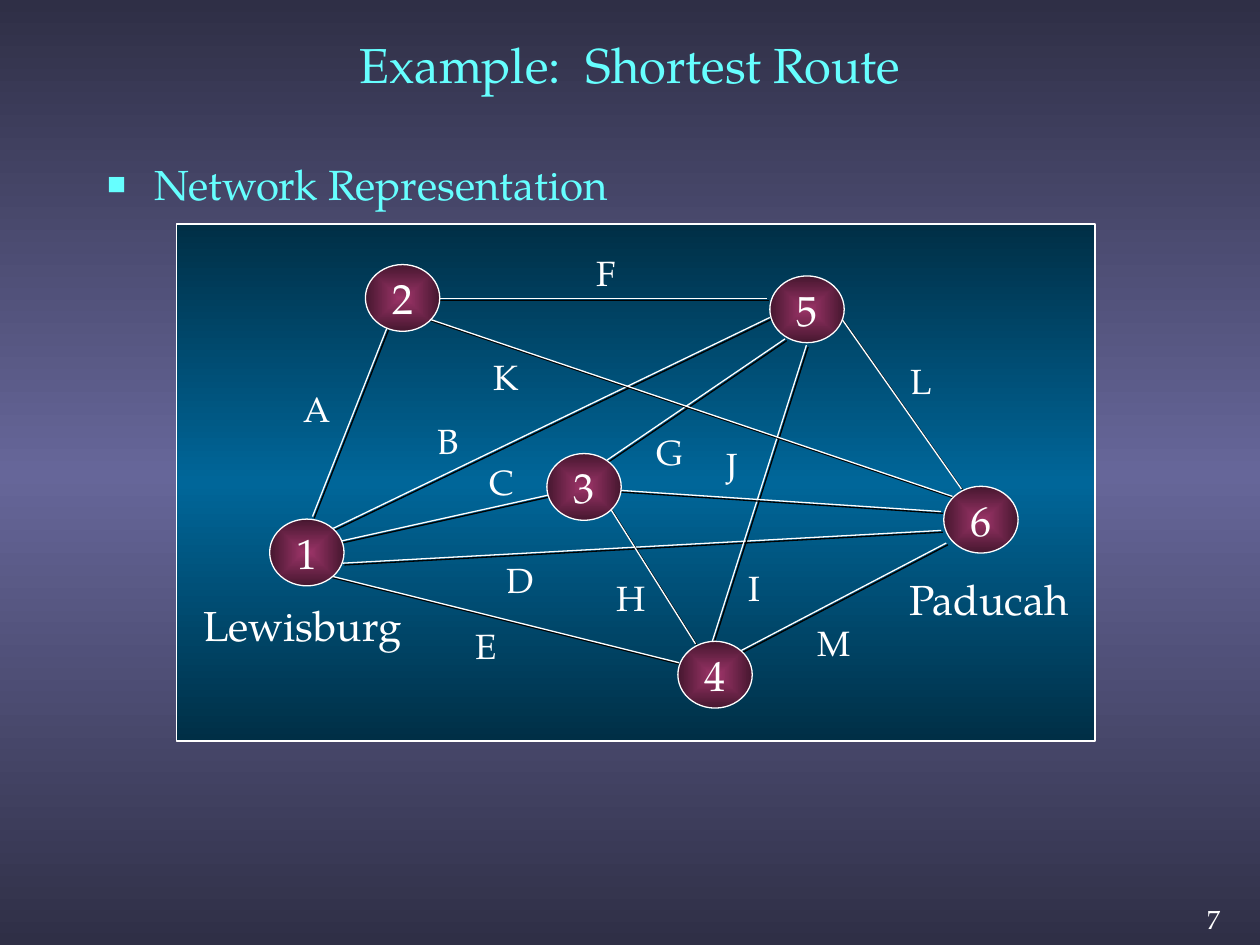
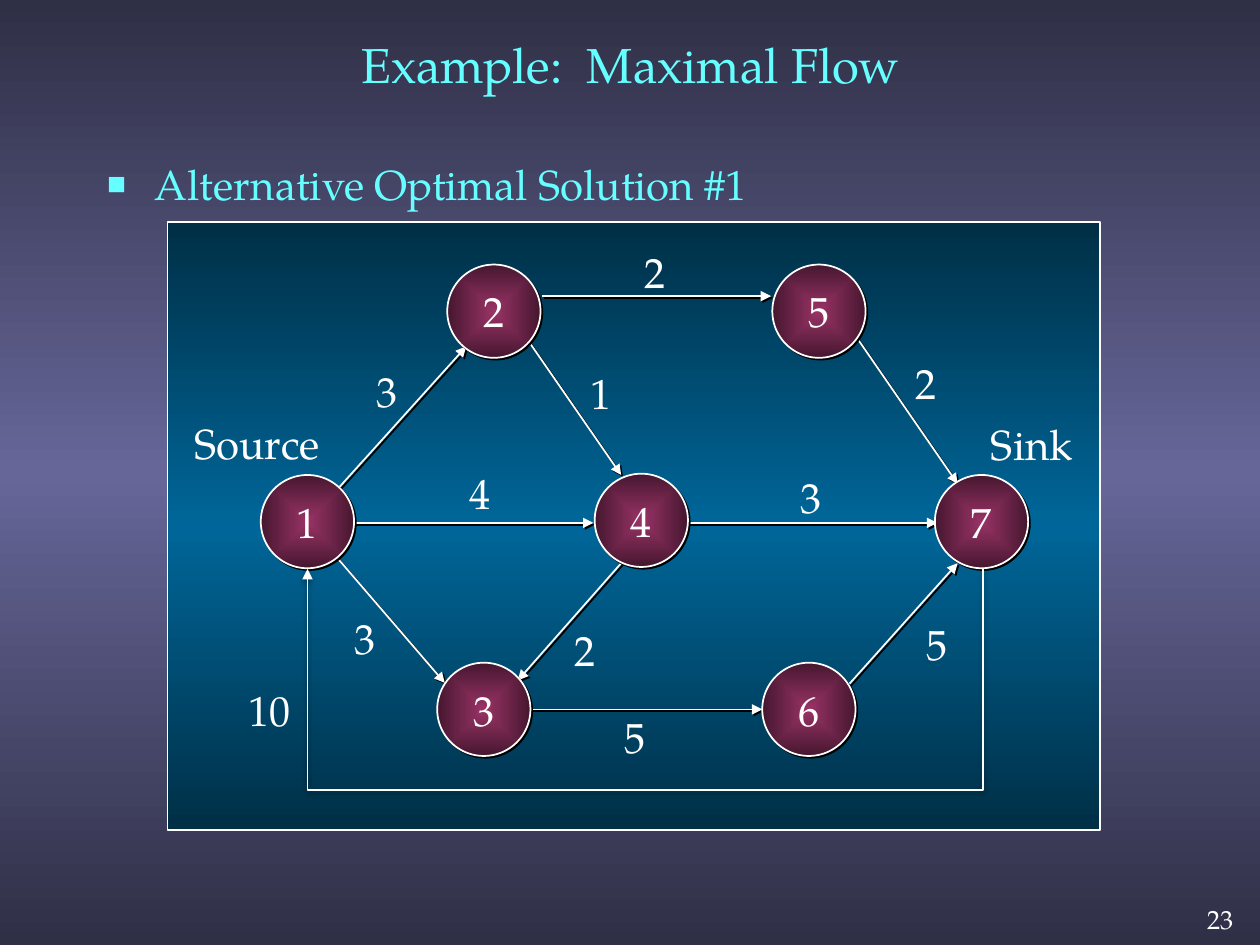
from lxml import etree
from pptx import Presentation
from pptx.dml.color import RGBColor
from pptx.enum.shapes import MSO_CONNECTOR as LINK, MSO_SHAPE as SHAPE
from pptx.enum.text import MSO_ANCHOR as ANCHOR, PP_ALIGN as ALIGN
from pptx.oxml import parse_xml
from pptx.oxml.ns import nsdecls, qn
from pptx.util import Inches, Pt

FONT = "TeX Gyre Pagella"
HEX = {
    "white": "FFFFFF", "black": "000000", "aqua": "66FFFF",
    "slate": "666699", "night": "2F2F46",
    "blue": "006699", "navy": "002F46",
    "plum": "993366", "wine": "46172F",
}
TITLE_BOX = (0.75, 0.06, 8.5, 0.89)
HEAD_BOX = (0.75, 1.21, 5.78, 0.62)
PAGE_BOX = (9.58, 7.08, 0.37, 0.43)

# Nodes: number -> left, top.  Edges: label, label centre, from, to.
ROUTE = {
    "title": "Example:  Shortest Route",
    "head": "Network Representation",
    "page": "7",
    "panel": (1.4, 1.78, 7.29, 4.1),
    "size": (0.59, 0.53),
    "line": 0.75,
    "label": 20,
    "directed": False,
    "nodes": {
        "1": (2.14, 4.12), "2": (2.9, 2.1), "3": (4.34, 3.6),
        "4": (5.38, 5.09), "5": (6.11, 2.19), "6": (7.49, 3.86),
    },
    "edges": [
        ("A", (2.52, 3.24), (2.48, 4.1), (3.08, 2.58)),
        ("B", (3.56, 3.5), (2.61, 4.21), (6.11, 2.52)),
        ("C", (3.98, 3.82), (2.68, 4.3), (4.35, 3.93)),
        ("D", (4.13, 4.6), (2.72, 4.47), (7.47, 4.21)),
        ("E", (3.86, 5.12), (2.58, 4.56), (5.39, 5.26)),
        ("F", (4.81, 2.16), (3.43, 2.37), (6.09, 2.37)),
        ("G", (5.32, 3.58), (4.82, 3.65), (6.23, 2.69)),
        ("H", (5.01, 4.74), (4.84, 4.03), (5.52, 5.11)),
        ("I", (5.99, 4.66), (5.65, 5.1), (6.4, 2.74)),
        ("J", (5.81, 3.69), (4.89, 3.89), (7.47, 4.06)),
        ("K", (4.02, 2.99), (3.4, 2.53), (7.56, 3.94)),
        ("L", (7.31, 3.02), (6.68, 2.53), (7.63, 3.88)),
        ("M", (6.62, 5.1), (5.85, 5.18), (7.51, 4.31)),
    ],
    "places": [("Lewisburg", (2.4, 4.96)), ("Paducah", (7.85, 4.75))],
}
FLOW = {
    "title": "Example:  Maximal Flow",
    "head": "Alternative Optimal Solution #1",
    "page": "23",
    "panel": (1.33, 1.76, 7.4, 4.83),
    "size": (0.74, 0.74),
    "line": 1,
    "label": 24,
    "directed": True,
    "nodes": {
        "1": (2.07, 3.77), "2": (3.55, 2.1), "3": (3.47, 5.26),
        "4": (4.72, 3.76), "5": (6.13, 2.1), "6": (6.05, 5.26),
        "7": (7.42, 3.77),
    },
    "edges": [
        ("3", (3.07, 3.1), (2.69, 3.87), (3.7, 2.75)),
        ("4", (3.81, 3.91), (2.81, 4.15), (4.71, 4.15)),
        ("3", (2.9, 5.06), (2.67, 4.42), (3.53, 5.42)),
        ("2", (5.2, 2.16), (4.3, 2.35), (6.12, 2.35)),
        ("1", (4.77, 3.12), (4.19, 2.7), (4.93, 3.77)),
        ("2", (7.35, 3.04), (6.8, 2.68), (7.6, 3.84)),
        ("3", (6.44, 3.94), (5.45, 4.15), (7.44, 4.15)),
        ("2", (4.64, 5.16), (4.93, 4.47), (4.11, 5.4)),
        ("5", (7.44, 5.11), (6.73, 5.44), (7.6, 4.47)),
        ("5", (5.04, 5.85), (4.21, 5.63), (6.05, 5.63)),
    ],
    "shaded": (7.44, 5.11),
    "places": [("Source", (2.04, 3.51)), ("Sink", (8.19, 3.52)),
               ("10", (2.14, 5.63))],
    "back": ((7.8, 4.51), (2.44, 4.51), 6.3),
}


def inch(*nums):
    return [Inches(n) for n in nums]


def shade(node):
    """Give a shape, connector or run element a hard offset shadow."""
    for old in node.findall(qn("a:effectLst")):
        node.remove(old)
    node.append(parse_xml(
        f'<a:effectLst {nsdecls("a")}><a:outerShdw dist="17960" dir="2700000">'
        f'<a:srgbClr val="{HEX["black"]}"/></a:outerShdw></a:effectLst>'))


def blend(node, names, path):
    """Replace the solid fill inside node with a gradient of evenly set stops."""
    step = 100000 // (len(names) - 1)
    stops = "".join(f'<a:gs pos="{i * step}"><a:srgbClr val="{HEX[n]}"/></a:gs>'
                    for i, n in enumerate(names))
    node.replace(node.find(qn("a:solidFill")), parse_xml(
        f'<a:gradFill rotWithShape="1" {nsdecls("a")}>'
        f'<a:gsLst>{stops}</a:gsLst>{path}</a:gradFill>'))


DOWN = '<a:lin ang="5400000" scaled="0"/>'
CORE = ('<a:path path="shape"><a:fillToRect l="50000" t="50000" '
        'r="50000" b="50000"/></a:path>')


def write(frame, text, size=24, color="white", align=ALIGN.CENTER,
          anchor=ANCHOR.MIDDLE, pad=0, wrap=False, shadow=False):
    frame.word_wrap = wrap
    frame.vertical_anchor = anchor
    frame.margin_left = frame.margin_right = Inches(pad)
    frame.margin_top = frame.margin_bottom = Inches(pad / 2)
    para = frame.paragraphs[0]
    para.alignment = align
    run = para.add_run()
    run.text = text
    run.font.size = Pt(size)
    run.font.color.rgb = RGBColor.from_string(HEX[color])
    if shadow:
        shade(run.font._element)
    run.font.name = FONT
    return para


def label(slide, text, mid, **form):
    wide, high = 1.6, 0.4
    box = slide.shapes.add_textbox(
        *inch(mid[0] - wide / 2, mid[1] - high / 2, wide, high))
    write(box.text_frame, text, **form)


def solid(slide, kind, box, line, names, path):
    shape = slide.shapes.add_shape(kind, *inch(*box))
    shape.shadow.inherit = False
    shape.fill.solid()
    blend(shape._element.spPr, names, path)
    stroke(shape, line)
    return shape


def stroke(shape, width):
    shape.line.color.rgb = RGBColor.from_string(HEX["white"])
    shape.line.width = Pt(width)


def link(slide, start, end, width, arrow, kind=LINK.STRAIGHT):
    wire = slide.shapes.add_connector(kind, *inch(*start, *end))
    stroke(wire, width)
    if arrow:
        etree.SubElement(wire.line._get_or_add_ln(), qn("a:tailEnd"),
                         type="triangle")
    return wire


def loop(slide, start, end, low, width):
    """Draw an elbow that leaves start, drops to low and climbs to end."""
    thin, span = 0.01, start[0] - end[0]
    wire = link(slide, start, end, width, True, LINK.ELBOW)
    wire.left, wire.top, wire.width, wire.height = inch(
        (start[0] + end[0] - thin) / 2, start[1] - span / 2, thin, span)
    frame = wire._element.spPr.find(qn("a:xfrm"))
    frame.attrib.pop("flipH", None)
    frame.set("rot", "5400000")
    geom = wire._element.spPr.find(qn("a:prstGeom"))
    bend = round((low - start[1]) / thin * 100000)
    etree.SubElement(geom.find(qn("a:avLst")), qn("a:gd"),
                     name="adj1", fmla=f"val {bend}")


def place(shape, box):
    shape.left, shape.top, shape.width, shape.height = inch(*box)
    return shape.text_frame


def frame(prs, data):
    """Add a slide with its title, heading, page number and panel."""
    slide = prs.slides.add_slide(prs.slide_layouts[1])
    title, body = slide.placeholders
    write(place(title, TITLE_BOX), data["title"], size=28, color="aqua",
          pad=0.1, wrap=True)
    para = write(place(body, HEAD_BOX), data["head"], color="aqua",
                 align=ALIGN.LEFT, anchor=ANCHOR.TOP, pad=0.1, wrap=True)
    props = para._p.get_or_add_pPr()
    props.set("marL", str(Inches(0.38)))
    props.set("indent", str(-Inches(0.38)))
    tint = etree.SubElement(props, qn("a:buClr"))
    etree.SubElement(tint, qn("a:srgbClr"), val=HEX["aqua"])
    etree.SubElement(props, qn("a:buSzPct"), val="75000")
    etree.SubElement(props, qn("a:buChar"), char="■")
    page = slide.shapes.add_textbox(*inch(*PAGE_BOX))
    write(page.text_frame, data["page"], size=15, align=ALIGN.LEFT, shadow=True)
    solid(slide, SHAPE.RECTANGLE, data["panel"], 1,
          ("navy", "blue", "navy"), DOWN)
    return slide


def graph(slide, data):
    width, arrow = data["line"], data["directed"]
    for _, _, start, end in data["edges"]:
        shade(link(slide, start, end, width, arrow)._element.spPr)
    for name, spot in data["nodes"].items():
        node = solid(slide, SHAPE.OVAL, spot + data["size"], width,
                     ("plum", "wine"), CORE)
        if arrow:
            shade(node._element.spPr)
        write(node.text_frame, name)
    for text, mid, _, _ in data["edges"]:
        label(slide, text, mid, size=data["label"],
              shadow=mid == data.get("shaded"))
    for text, mid in data["places"]:
        label(slide, text, mid)
    if "back" in data:
        loop(slide, *data["back"], width)


def main():
    prs = Presentation()
    prs.slide_width, prs.slide_height = inch(10, 7.5)
    master = prs.slide_master
    master.background.fill.solid()
    blend(master._element.find(".//" + qn("p:bgPr")),
          ("night", "slate", "night"), DOWN)
    for data in (ROUTE, FLOW):
        graph(frame(prs, data), data)
    prs.save("out.pptx")


if __name__ == "__main__":
    main()
